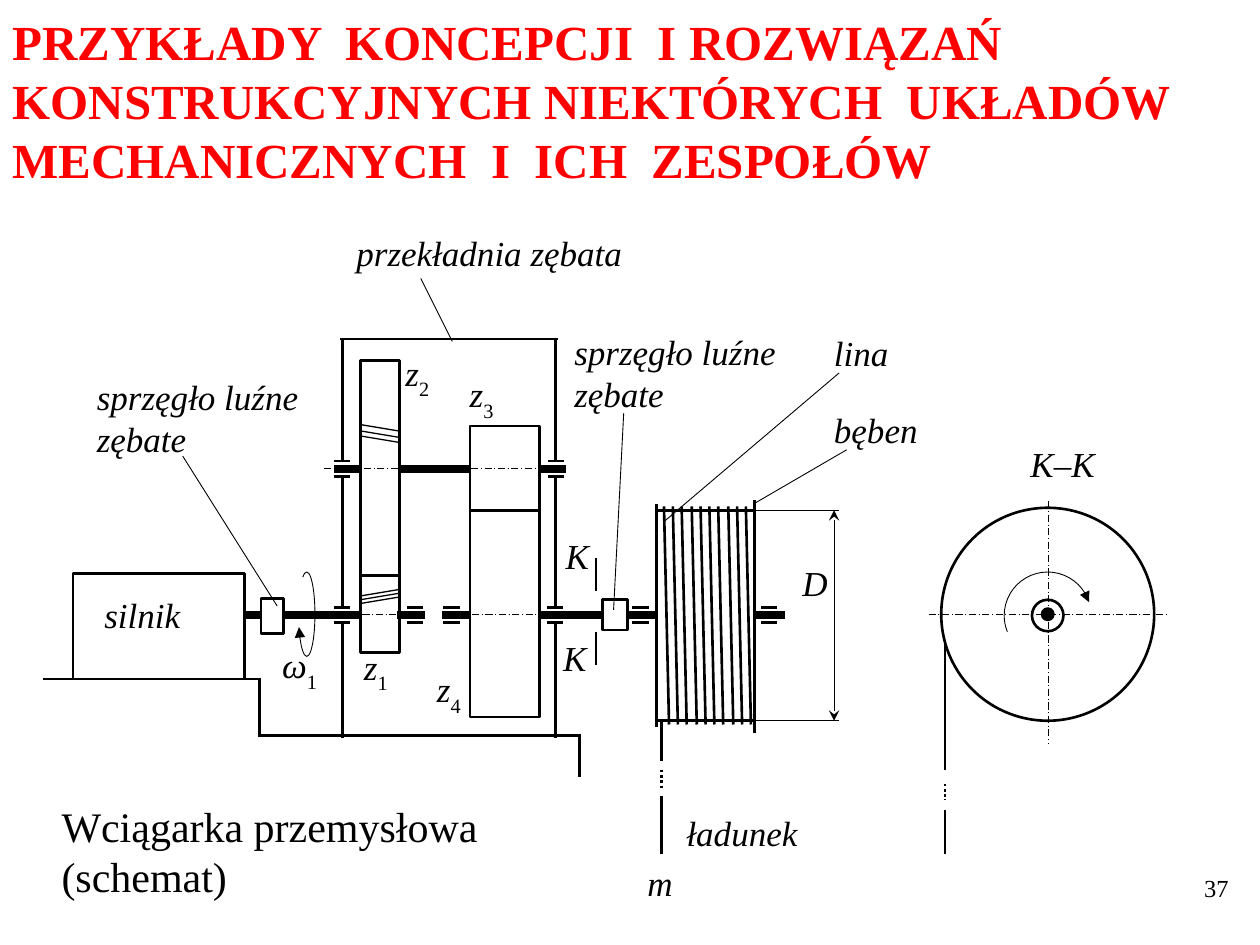
from dataclasses import dataclass

from lxml import etree
from pptx import Presentation
from pptx.dml.color import RGBColor
from pptx.enum.dml import MSO_LINE
from pptx.enum.shapes import MSO_CONNECTOR, MSO_SHAPE
from pptx.enum.text import MSO_ANCHOR, MSO_AUTO_SIZE, PP_ALIGN
from pptx.oxml.ns import qn
from pptx.util import Pt

PX = 9144  # 100 px to the inch
STRAIGHT = MSO_CONNECTOR.STRAIGHT
RECT, OVAL, ARC = MSO_SHAPE.RECTANGLE, MSO_SHAPE.OVAL, MSO_SHAPE.ARC
AXIS_DASH, DOTS = MSO_LINE.LONG_DASH_DOT, MSO_LINE.ROUND_DOT
LEFT, RIGHT = PP_ALIGN.LEFT, PP_ALIGN.RIGHT


@dataclass(frozen=True)
class Theme:
    font: str = "Times New Roman"
    ink: RGBColor = RGBColor(0, 0, 0)
    title_ink: RGBColor = RGBColor(255, 0, 0)
    title: int = 28
    caption: int = 24
    label: int = 20
    number: int = 14
    thin: float = 0.5
    tooth: float = 0.75
    outline: float = 1.5
    shaft: float = 4.5


THEME = Theme()


def style_paragraph(paragraph, size, color=THEME.ink, bold=False, italic=False):
    font = paragraph.font
    font.name, font.size, font.color.rgb = THEME.font, Pt(size), color
    font.bold, font.italic = bold, italic


def add_arrow(line, *ends):
    for end in ends:
        tag, kind = end
        etree.SubElement(line._get_or_add_ln(), qn(tag), type=kind)


@dataclass
class Region:
    """Drawing area whose parts are placed relative to its left top corner."""
    shapes: object
    left: int
    top: int

    def box(self, x, y, width, height):
        return [v * PX for v in (self.left + x, self.top + y, width, height)]

    def line(self, x1, y1, x2, y2, weight=THEME.outline, dash=None):
        ends = (self.left + x1, self.top + y1, self.left + x2, self.top + y2)
        connector = self.shapes.add_connector(STRAIGHT, *(v * PX for v in ends))
        connector.line.color.rgb = THEME.ink
        connector.line.width = Pt(weight)
        if dash:
            connector.line.dash_style = dash
        etree.SubElement(connector._element.spPr, qn("a:effectLst"))
        return connector.line

    def outline(self, kind, x, y, width, height, weight=THEME.outline):
        shape = self.shapes.add_shape(kind, *self.box(x, y, width, height))
        shape.shadow.inherit = False
        shape.fill.background()
        shape.line.color.rgb = THEME.ink
        shape.line.width = Pt(weight)
        return shape

    def rotation(self, x, y, width, height, start, end):
        arc = self.outline(ARC, x, y, width, height, THEME.thin)
        for i, degrees in enumerate((start, end)):
            arc.adjustments[i] = degrees * 0.6  # 60000 units to the degree
        add_arrow(arc.line, ("a:tailEnd", "triangle"))

    def text(self, x, y, width, height, *rows, size=THEME.label, italic=True,
             align=LEFT, subscript=None):
        frame = self.shapes.add_textbox(*self.box(x, y, width, height)).text_frame
        frame.word_wrap = True
        frame.text = "\n".join(rows)
        for paragraph in frame.paragraphs:
            paragraph.alignment = align
            style_paragraph(paragraph, size, italic=italic)
        if subscript:
            run = frame.paragraphs[0].add_run()
            run.text = subscript
            run.font.italic = False
            run.font._element.set("baseline", "-30000")

    def shafts(self, y, *spans):
        for start, end in spans:
            self.line(start, y, end, y, THEME.shaft)

    def bearings(self, y, *starts):
        for x in starts:
            for side in (-6, 6):
                self.line(x, y + side, x + 13, y + side)

    def rope(self, x, *stops):
        top, bottom, dots_top, dots_bottom, end_top, end_bottom = stops
        self.line(x, top, x, bottom)
        self.line(x, dots_top, x, dots_bottom, dash=DOTS)
        self.line(x, end_top, x, end_bottom)

    def coupling_label(self, x, y):
        self.text(x, y, 216, 82, "sprzęgło luźne", "zębate")


def draw_motor(shapes, left, top):
    motor = Region(shapes, left, top)
    motor.outline(RECT, 24, 0, 136, 84)
    motor.text(39, 11, 110, 59, "silnik")
    # Base and its step
    motor.line(0, 84, 173, 84)
    motor.line(172, 83, 172, 130)
    # Shaft, coupling and direction of rotation
    motor.shafts(33, (159, 173))
    motor.outline(RECT, 173, 20, 18, 28)
    motor.rotation(203, -1, 13, 67, 264, 121)
    motor.text(180, 51, 69, 59, "ω", subscript="1")
    motor.coupling_label(33, -162)
    motor.line(186, 26, 111, -93, THEME.thin)


def draw_gearbox(shapes, left, top):
    gearbox = Region(shapes, left, top)
    upper, lower = 103, 219
    # Casing, with gaps in the walls at the bearings
    gearbox.line(0, 0, 173, 0)
    gearbox.line(-65, 315, 191, 315)
    gearbox.line(190, 315, 190, 348)
    for wall in (2, 171):
        for start, end in ((0, 98), (109, 213), (224, 317)):
            gearbox.line(wall, start, wall, end)
    # Gear pairs
    for x, y, width, height, contact in ((16, 17, 31, 232, 188),
                                         (103, 69, 55, 231, 136)):
        gearbox.outline(RECT, x, y, width, height)
        gearbox.line(x, contact, x + width, contact)
    # Slanted teeth
    for slope, starts in ((5, (68, 73, 77)), (-5, (204, 207, 210))):
        for y in starts:
            gearbox.line(16, y, 46, y + slope, THEME.tooth)
    # Shafts, bearings and axes
    gearbox.shafts(upper, (-5, 15), (46, 103), (158, 179))
    gearbox.shafts(lower, (-45, 15), (45, 67), (81, 103), (158, 208))
    gearbox.bearings(upper, -5, 165)
    gearbox.bearings(lower, -5, 53, 82, 164)
    for y, start, end in ((upper, -13, 159), (lower, 7, 55), (lower, 94, 173)):
        gearbox.line(start, y, end, y, THEME.thin, AXIS_DASH)
    # Labels
    for number, x, y in (("1", 9, 238), ("2", 42, 5), ("3", 93, 22), ("4", 67, 256)):
        gearbox.text(x, y, 60, 59, "z", subscript=number)
    gearbox.text(3, -90, 275, 52, "przekładnia zębata")
    gearbox.line(89, 2, 64, -48, THEME.thin)


def draw_drum(shapes, left, top):
    drum = Region(shapes, left, top)
    axis, edges = 91, (8, 175)
    # Coupling, shaft and bearings
    drum.outline(RECT, 0, 79, 20, 24)
    drum.shafts(axis, (19, 43), (121, 145))
    drum.bearings(axis, 24, 126)
    # Flanges, edges and extension lines
    drum.line(43, 3, 43, 180)
    drum.line(121, 0, 121, 185)
    for y in edges:
        drum.line(43, y, 121, y)
        drum.line(121, y, 188, y, THEME.thin)
    # Rope turns and hanging rope
    for turn in range(10):
        x = 49 + round(turn * 65 / 9)
        drum.line(x, 5, x + 4, 178)
    drum.rope(47, 175, 207, 214, 228, 235, 281)
    # Diameter
    diameter = drum.line(184, edges[0], 184, edges[1], THEME.thin)
    add_arrow(diameter, ("a:headEnd", "stealth"), ("a:tailEnd", "stealth"))
    drum.text(149, 44, 53, 59, "D")
    # Section marks
    for y in (46, 105):
        drum.line(-5, y, -5, y + 26)
    drum.text(-39, 22, 68, 59, "K")
    drum.text(-41, 103, 68, 59, "K")
    # Labels and leaders
    drum.coupling_label(-32, -140)
    for name, x, y in (("lina", 174, -139), ("bęben", 174, -78), ("ładunek", 57, 242)):
        drum.text(x, y, 115, 55, name)
    drum.text(26, 282, 48, 51, "m")
    for leader in ((9, 87, 17, -69), (49, 17, 188, -101), (120, 3, 194, -40)):
        drum.line(*leader, THEME.thin)


def draw_section(shapes, left, top):
    section = Region(shapes, left, top)
    section.outline(OVAL, 0, 0, 169, 169)
    section.outline(OVAL, 72, 73, 25, 25)
    shaft = section.outline(OVAL, 80, 80, 9, 9)
    shaft.fill.solid()
    shaft.fill.fore_color.rgb = THEME.ink
    section.line(-10, 85, 179, 85, THEME.thin, AXIS_DASH)
    section.line(85, -5, 85, 187, THEME.thin, AXIS_DASH)
    section.rotation(50, 51, 69, 69, 158, 342)
    section.rope(3, 106, 208, 219, 232, 240, 275)
    section.text(61, -57, 90, 59, "K–K")


def place_title(title, left, top, width, height):
    title.left, title.top, title.width, title.height = (
        v * PX for v in (left, top, width, height))
    frame = title.text_frame
    frame.text = ("PRZYKŁADY  KONCEPCJI  I ROZWIĄZAŃ KONSTRUKCYJNYCH NIEKTÓRYCH  "
                  "UKŁADÓW  MECHANICZNYCH  I  ICH  ZESPOŁÓW")
    frame.word_wrap = True
    frame.auto_size = MSO_AUTO_SIZE.NONE
    frame.vertical_anchor = MSO_ANCHOR.TOP
    frame.paragraphs[0].alignment = LEFT
    style_paragraph(frame.paragraphs[0], THEME.title, THEME.title_ink, bold=True)


def main():
    deck = Presentation()
    deck.slide_width, deck.slide_height = 1000 * PX, 750 * PX
    slide = deck.slides.add_slide(deck.slide_layouts[5])
    place_title(slide.shapes.title, 0, 4, 1000, 151)
    draw_motor(slide.shapes, 34, 455)
    draw_gearbox(slide.shapes, 270, 269)
    draw_drum(slide.shapes, 478, 397)
    draw_section(slide.shapes, 747, 403)
    # Caption and slide number
    page = Region(slide.shapes, 0, 0)
    page.text(39, 630, 406, 91, "Wciągarka przemysłowa (schemat)",
              size=THEME.caption, italic=False)
    page.text(922, 688, 63, 46, "37", size=THEME.number, italic=False, align=RIGHT)
    deck.save("out.pptx")


if __name__ == "__main__":
    main()
